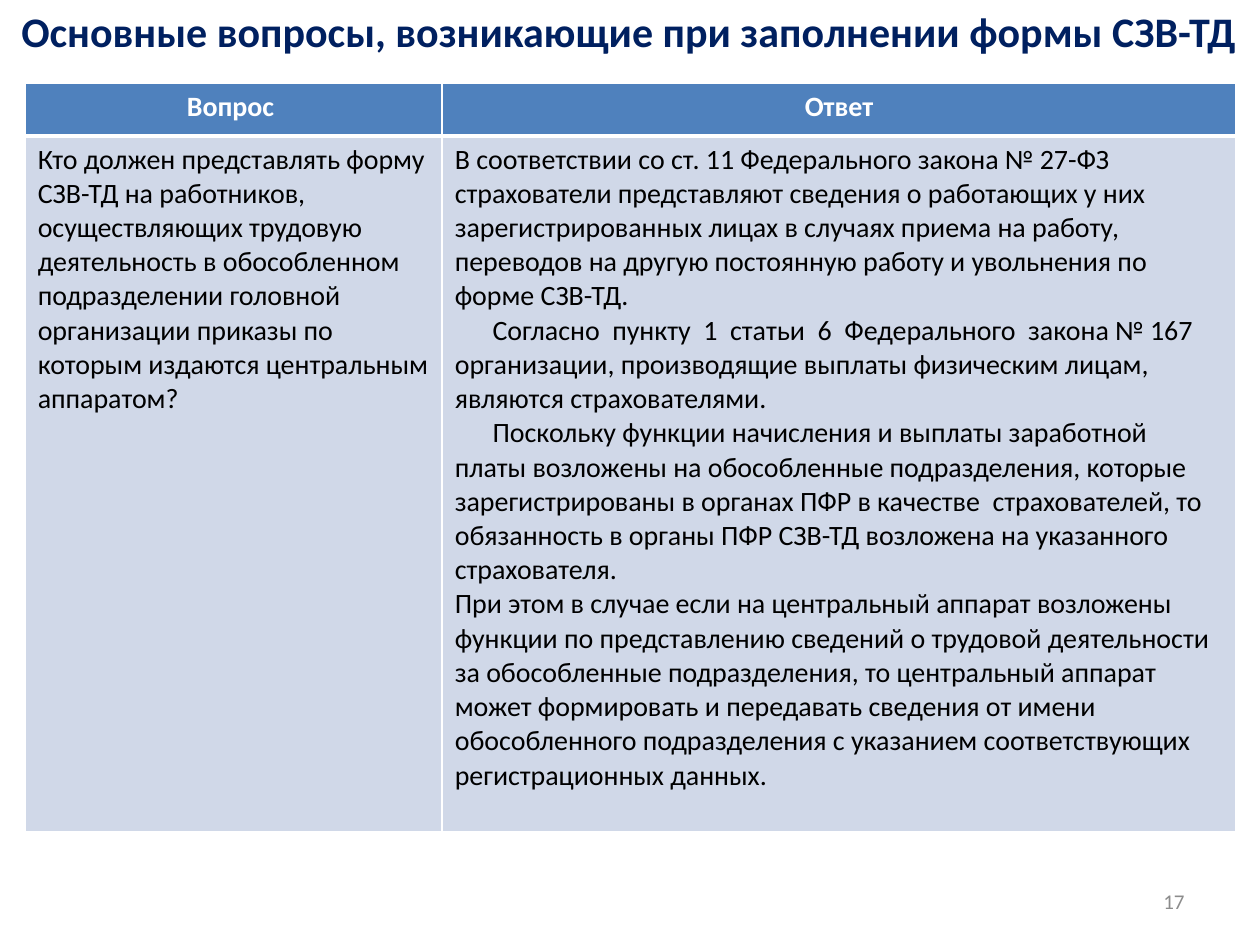
"""Build a question-and-answer slide about filling in the СЗВ-ТД form."""
import pptx
import pptx.dml.color
import pptx.enum.text
import pptx.oxml
import pptx.oxml.ns
import pptx.util
from pptx.util import Inches

TITLE = "Основные вопросы, возникающие при заполнении формы СЗВ-ТД"
PAGE = "17"
HEADERS = ["Вопрос ", "Ответ"]
QUESTION = [
    ("Кто должен представлять форму СЗВ-ТД на работников, осуществляющих трудовую "
     "деятельность в обособленном подразделении головной организации приказы по "
     "которым издаются центральным аппаратом?", 0),
]
ANSWER = [
    ("В соответствии со ст. 11 Федерального закона № 27-ФЗ страхователи представляют "
     "сведения о работающих у них зарегистрированных лицах в случаях приема на работу, "
     "переводов на другую постоянную работу и увольнения по форме СЗВ-ТД.", 0),
    ("Согласно  пункту  1  статьи  6  Федерального  закона № 167 организации, "
     "производящие выплаты физическим лицам, являются страхователями.", 0.3),
    ("Поскольку функции начисления и выплаты заработной платы возложены на обособленные "
     "подразделения, которые зарегистрированы в органах ПФР в качестве  страхователей, то "
     "обязанность в органы ПФР СЗВ-ТД возложена на указанного страхователя.", 0.3),
    ("При этом в случае если на центральный аппарат возложены функции по представлению "
     "сведений о трудовой деятельности за обособленные подразделения, то центральный "
     "аппарат может формировать и передавать сведения от имени обособленного "
     "подразделения с указанием соответствующих регистрационных данных.", 0),
]
COLUMNS = [3.31, 6.3]
ROWS = [0.42, 5.52]
THEME = {
    "font": "Calibri",
    "title": "002060", "page": "8C8C8C", "text": "000000", "white": "FFFFFF",
    "header_fill": "4F81BD", "body_fill": "D0D8E8",
    "title_size": 24, "text_size": 16, "page_size": 12,
    "thin": 1, "thick": 3,
}
ALIGN = pptx.enum.text.PP_ALIGN


def rgb(name):
    return pptx.dml.color.RGBColor.from_string(THEME[name])


def write(tf, paragraphs, size="text_size", color="text", bold=False, align=ALIGN.LEFT):
    for i, (text, indent) in enumerate(paragraphs):
        p = tf.paragraphs[0] if i == 0 else tf.add_paragraph()
        p.alignment = align
        if indent:
            p._p.get_or_add_pPr().set("indent", str(Inches(indent)))
        r = p.add_run()
        r.text = text
        r.font.name = THEME["font"]
        r.font.size = pptx.util.Pt(THEME[size])
        r.font.bold = bold
        r.font.color.rgb = rgb(color)


def style_cell(cell, fill=None, **widths):
    if fill:
        cell.fill.solid()
        cell.fill.fore_color.rgb = rgb(fill)
        line = f'<a:solidFill><a:srgbClr val="{THEME["white"]}"/></a:solidFill>'
    else:
        cell.fill.background()
        line = "<a:noFill/>"
    tcPr = cell._tc.get_or_add_tcPr()
    for i, side in enumerate("LRTB"):
        width = pptx.util.Pt(THEME[widths.get(side, "thin")])
        tcPr.insert(i, pptx.oxml.parse_xml(
            f'<a:ln{side} {pptx.oxml.ns.nsdecls("a")} w="{width}">{line}</a:ln{side}>'))


def add_grid(slide, left, top, columns, rows):
    table = slide.shapes.add_table(
        len(rows), len(columns), Inches(left), Inches(top),
        Inches(sum(columns)), Inches(sum(rows))).table
    for column, width in zip(table.columns, columns):
        column.width = Inches(width)
    for row, height in zip(table.rows, rows):
        row.height = Inches(height)
    return table


def main():
    prs = pptx.Presentation()
    prs.slide_width, prs.slide_height = Inches(10), Inches(7.5)
    slide = prs.slides.add_slide(prs.slide_layouts[6])

    box = slide.shapes.add_textbox(Inches(7.17), Inches(6.95), Inches(2.33), Inches(0.4))
    box.text_frame.word_wrap = True
    box.text_frame.vertical_anchor = pptx.enum.text.MSO_ANCHOR.MIDDLE
    write(box.text_frame, [(PAGE, 0)], size="page_size", color="page", align=ALIGN.RIGHT)

    table = add_grid(slide, 0.2, 0.66, COLUMNS, ROWS)
    for i, (header, body) in enumerate(zip(HEADERS, [QUESTION, ANSWER])):
        head, cell = table.cell(0, i), table.cell(1, i)
        style_cell(head, "header_fill", B="thick")
        style_cell(cell, "body_fill", T="thick")
        write(head.text_frame, [(header, 0)], color="white", bold=True, align=ALIGN.CENTER)
        write(cell.text_frame, body)

    banner = add_grid(slide, 0.05, 0.01, [9.88], [0.71])
    banner.first_row = banner.horz_banding = False
    title = banner.cell(0, 0)
    style_cell(title)
    write(title.text_frame, [(TITLE, 0)], size="title_size", color="title", bold=True,
          align=ALIGN.CENTER)

    prs.save("out.pptx")


if __name__ == "__main__":
    main()
